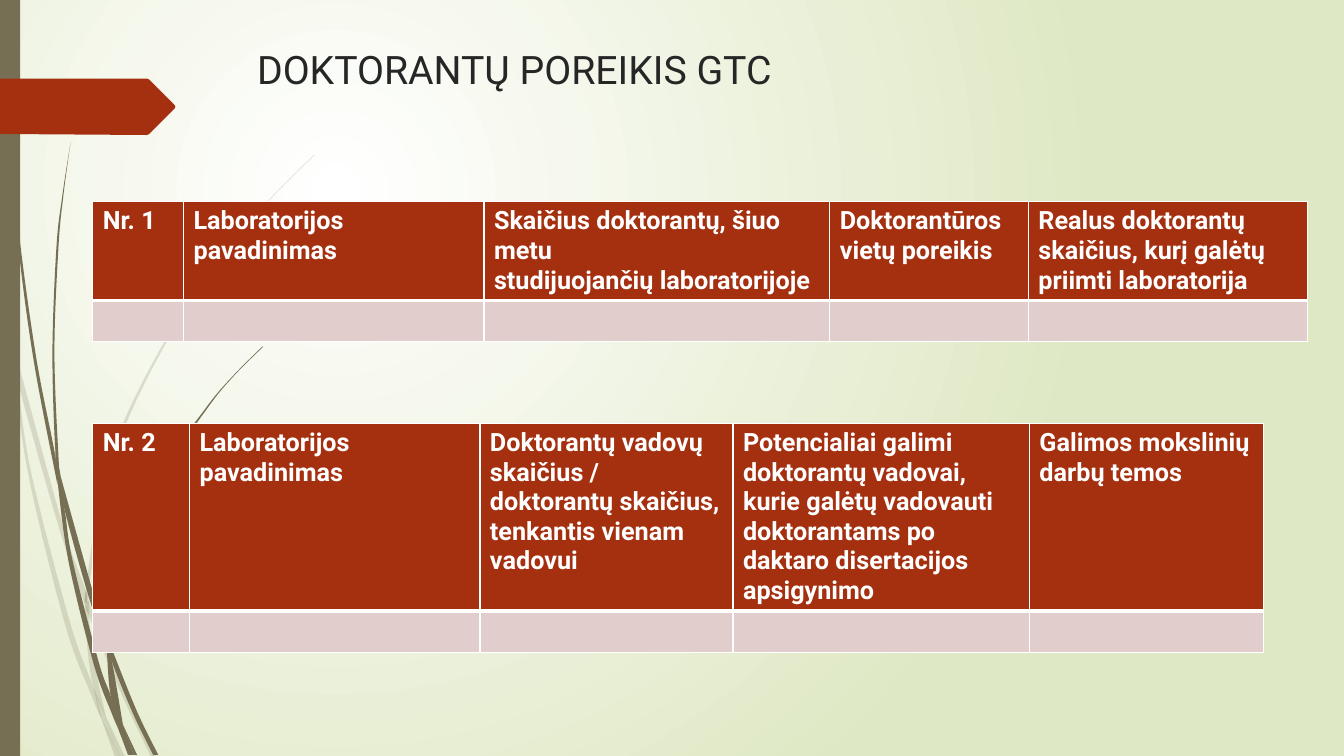
"""Builds the slide on the demand for doctoral students."""
from dataclasses import dataclass

from lxml.etree import SubElement
from pptx import Presentation
from pptx.dml.color import RGBColor
from pptx.enum.shapes import MSO_SHAPE
from pptx.enum.text import MSO_ANCHOR, PP_ALIGN
from pptx.oxml import parse_xml
from pptx.oxml.ns import nsdecls, qn
from pptx.util import Pt

PX = 9144
FONT = "Roboto"
NBSP = chr(160)
COLORS = {
    "stem": "766F54",
    "accent": "A53010",
    "body": "E1CDCC",
    "title": "262626",
    "white": "FFFFFF",
    "meadow": "DFE8C4",
}
Point = tuple[int, int]


@dataclass(frozen=True)
class Blade:
    left: list[Point]
    right: list[Point]


@dataclass(frozen=True)
class LabTable:
    left: int
    top: int
    widths: list[int]
    header_height: int
    headers: list[str]


FADED_BLADES = [
    Blade([(0, 299), (10, 344), (11, 350)], [(0, 282), (9, 322), (11, 350)]),
    Blade([(14, 345), (17, 376), (58, 522), (84, 599)],
          [(14, 345), (62, 520), (85, 586), (84, 599)]),
    Blade([(88, 596), (88, 610), (123, 694), (150, 751)],
          [(88, 596), (92, 607), (127, 692), (155, 751)]),
    Blade([(105, 711), (119, 751)], [(105, 711), (124, 751)]),
    Blade([(11, 350), (28, 470), (65, 621), (92, 693), (101, 714)],
          [(11, 350), (17, 376), (31, 469), (70, 619), (93, 683), (101, 714)]),
    Blade([(84, 599), (87, 646), (93, 683), (105, 711)],
          [(84, 599), (88, 610), (91, 646), (105, 711)]),
    Blade([(88, 596), (85, 586), (107, 461), (158, 348), (228, 244), (268, 197), (312, 153)],
          [(88, 596), (88, 584), (110, 462), (160, 349), (229, 245), (268, 198), (312, 154)]),
    Blade([(101, 714), (114, 751)], [(101, 714), (119, 751)]),
    Blade([(85, 586), (84, 599), (88, 610)], [(85, 586), (88, 596), (88, 610)]),
    Blade([(93, 683), (101, 714), (119, 751)], [(93, 683), (105, 711), (119, 751)]),
]
BLADES = [
    Blade([(3, 0), (4, 48), (7, 110), (17, 233), (33, 355), (57, 481)],
          [(4, 0), (5, 48), (8, 109), (19, 232), (36, 355), (55, 453), (57, 481)]),
    Blade([(60, 472), (64, 505), (88, 592), (106, 645)],
          [(60, 472), (93, 590), (106, 631), (106, 645)]),
    Blade([(110, 641), (111, 656), (132, 708), (152, 749)],
          [(110, 641), (113, 649), (136, 706), (157, 749)]),
    Blade([(57, 477), (68, 557), (93, 659), (111, 708), (117, 722)],
          [(57, 477), (64, 505), (72, 556), (98, 657), (110, 691), (117, 722)]),
    Blade([(70, 141), (62, 193), (56, 245), (52, 349), (55, 449), (60, 472)],
          [(70, 141), (63, 193), (58, 245), (54, 349), (58, 453), (60, 472)]),
    Blade([(122, 719), (133, 749)], [(122, 719), (136, 749)]),
    Blade([(55, 449), (57, 477), (64, 505)], [(55, 449), (60, 472), (64, 505)]),
    Blade([(110, 641), (106, 631), (122, 551), (156, 474), (204, 405), (231, 373), (260, 344)],
          [(110, 641), (111, 633), (125, 552), (158, 476), (205, 406), (231, 374), (261, 344)]),
    Blade([(117, 722), (127, 749)], [(117, 722), (131, 749)]),
    Blade([(106, 645), (110, 691), (122, 719)], [(106, 645), (111, 656), (122, 719)]),
    Blade([(106, 631), (106, 645), (111, 656)], [(106, 631), (110, 641), (111, 656)]),
    Blade([(110, 691), (117, 722), (130, 749)], [(110, 691), (122, 719), (133, 749)]),
]
ARROW = [(0, 78), (146, 78), (148, 79), (173, 104), (174, 106), (173, 108),
         (148, 133), (146, 134), (0, 133)]
TABLES = [
    LabTable(92, 200, [90, 298, 343, 197, 277], 96, [
        f"Nr.{NBSP}1",
        "Laboratorijos pavadinimas",
        f"Skaičius doktorantų,{NBSP}šiuo metu studijuojančių{NBSP}laboratorijoje",
        "Doktorantūros vietų poreikis",
        "Realus doktorantų skaičius, kurį galėtų priimti laboratorija",
    ]),
    LabTable(92, 420, [96, 288, 251, 294, 232], 185, [
        f"Nr.{NBSP}2",
        "Laboratorijos pavadinimas",
        "Doktorantų vadovų skaičius / doktorantų skaičius, tenkantis vienam vadovui",
        "Potencialiai galimi doktorantų vadovai, kurie galėtų vadovauti "
        f"doktorantams po daktaro{NBSP}disertacijos apsigynimo",
        "Galimos mokslinių darbų temos",
    ]),
]
BODY_HEIGHT = 41


def color(key: str) -> RGBColor:
    return RGBColor.from_string(COLORS[key])


def paint(shape, key: str, opacity: int = 100) -> None:
    shape.shadow.inherit = False
    shape.fill.solid()
    shape.fill.fore_color.rgb = color(key)
    shape.line.fill.background()
    if opacity < 100:
        rgb = shape.fill._xPr.find(qn("a:solidFill"))[0]
        SubElement(rgb, qn("a:alpha")).set("val", str(opacity * 1000))


def draw_outline(slide, points: list[Point], key: str, opacity: int = 100):
    start, *rest = [(x * PX, y * PX) for x, y in points]
    builder = slide.shapes.build_freeform(*start, scale=1.0)
    builder.add_line_segments(rest, close=True)
    outline = builder.convert_to_shape()
    paint(outline, key, opacity)
    return outline


def bend(lines: list, points: list[Point]) -> None:
    padded = [points[0], *points, points[-1]]
    for line, a, b, c, d in zip(lines, padded, padded[1:], padded[2:], padded[3:]):
        first = [q + (r - p) / 6 for p, q, r in zip(a, b, c)]
        second = [r - (s - q) / 6 for q, r, s in zip(b, c, d)]
        line.tag = qn("a:cubicBezTo")
        for index, (x, y) in enumerate((first, second)):
            line.insert(index, parse_xml(
                f'<a:pt {nsdecls("a")} x="{round(x)}" y="{round(y)}"/>'))


def draw_blade(slide, blade: Blade, opacity: int) -> None:
    tip = blade.left[-1] == blade.right[-1]
    back = blade.right[::-1][tip:]
    base = blade.left[0] == blade.right[0]
    outline = draw_outline(slide, blade.left + back, "stem", opacity)
    geometry = outline._element.spPr.find(qn("a:custGeom"))
    corners = [(int(pt.get("x")), int(pt.get("y"))) for pt in geometry.iter(qn("a:pt"))]
    lines = list(geometry.iter(qn("a:lnTo")))
    turn = len(blade.left)
    bend(lines[:turn - 1], corners[:turn])
    home = corners[turn - tip:turn + len(back)]
    bend(lines[turn - tip:turn + len(back) - 1], home)
    if base and len(lines) > turn + len(back) - 1:
        lines[-1].getparent().remove(lines[-1])


def draw_background(slide) -> None:
    fill = slide.background.fill
    fill.gradient()
    for stop, key, position in zip(fill.gradient_stops, ("white", "meadow"), (0, 1)):
        stop.color.rgb = color(key)
        stop.position = position
    linear = next(slide.background._cSld.iter(qn("a:lin")))
    linear.getparent().replace(linear, parse_xml(
        f'<a:path {nsdecls("a")} path="circle">'
        '<a:fillToRect l="50000" t="50000" r="100000" b="100000"/></a:path>'))


def add_run(paragraph, text: str, size: int, key: str, bold: bool) -> None:
    run = paragraph.add_run()
    run.text = text
    run.font.name = FONT
    run.font.size = Pt(size)
    run.font.bold = bold
    run.font.color.rgb = color(key)


def draw_title(slide, text: str) -> None:
    title = slide.shapes.title
    title.left, title.top, title.width, title.height = (n * PX for n in (245, 40, 968, 89))
    title.text_frame.word_wrap = True
    title.text_frame.vertical_anchor = MSO_ANCHOR.TOP
    heading = title.text_frame.paragraphs[0]
    heading.alignment = PP_ALIGN.LEFT
    add_run(heading, text, 28, "title", False)


def format_cell(cell, key: str, top: int, bottom: int) -> None:
    cell.fill.solid()
    cell.fill.fore_color.rgb = color(key)
    properties = cell._tc.get_or_add_tcPr()
    for index, (side, width) in enumerate(zip("LRTB", (1, 1, top, bottom))):
        properties.insert(index, parse_xml(
            f'<a:ln{side} {nsdecls("a")} w="{Pt(width)}"><a:solidFill>'
            f'<a:srgbClr val="{COLORS["white"]}"/></a:solidFill></a:ln{side}>'))


def draw_table(slide, lab: LabTable) -> None:
    heights = [lab.header_height, BODY_HEIGHT]
    table = slide.shapes.add_table(
        2, len(lab.widths), lab.left * PX, lab.top * PX,
        sum(lab.widths) * PX, sum(heights) * PX).table
    table.horz_banding = False
    for row, height in zip(table.rows, heights):
        row.height = height * PX
    for index, (width, header) in enumerate(zip(lab.widths, lab.headers)):
        table.columns[index].width = width * PX
        format_cell(table.cell(0, index), "accent", 1, 3)
        format_cell(table.cell(1, index), "body", 3, 1)
        add_run(table.cell(0, index).text_frame.paragraphs[0], header, 18, "white", True)


def main() -> None:
    deck = Presentation()
    deck.slide_width, deck.slide_height = 1333 * PX, 750 * PX
    slide = deck.slides.add_slide(deck.slide_layouts[5])
    draw_background(slide)
    for blades, opacity in ((FADED_BLADES, 20), (BLADES, 100)):
        for blade in blades:
            draw_blade(slide, blade, opacity)
    side_bar = slide.shapes.add_shape(MSO_SHAPE.RECTANGLE, 0, 0, 20 * PX, 750 * PX)
    paint(side_bar, "stem")
    draw_outline(slide, ARROW, "accent")
    draw_title(slide, "DOKTORANTŲ POREIKIS GTC")
    for lab in TABLES:
        draw_table(slide, lab)
    deck.save("out.pptx")


if __name__ == "__main__":
    main()
